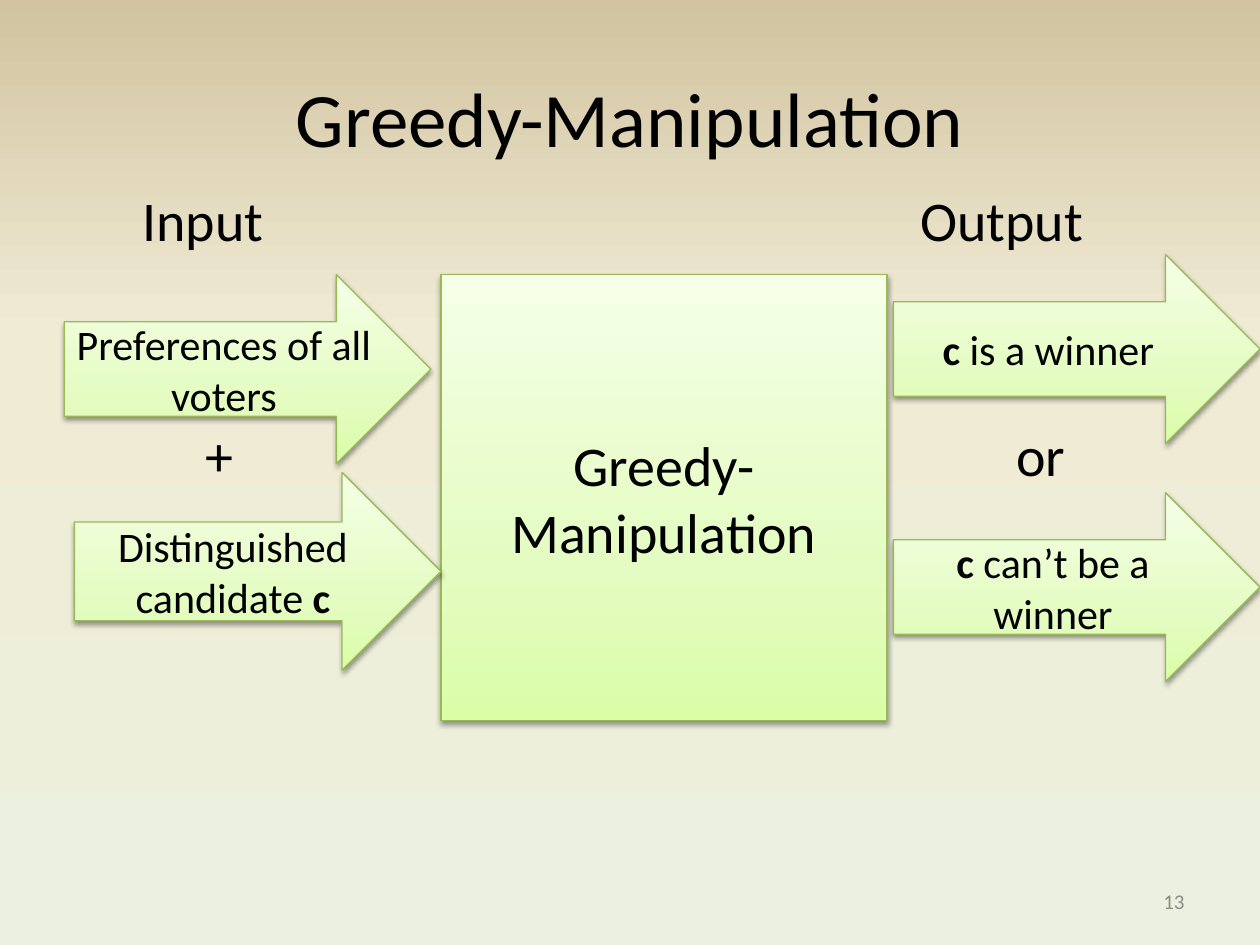
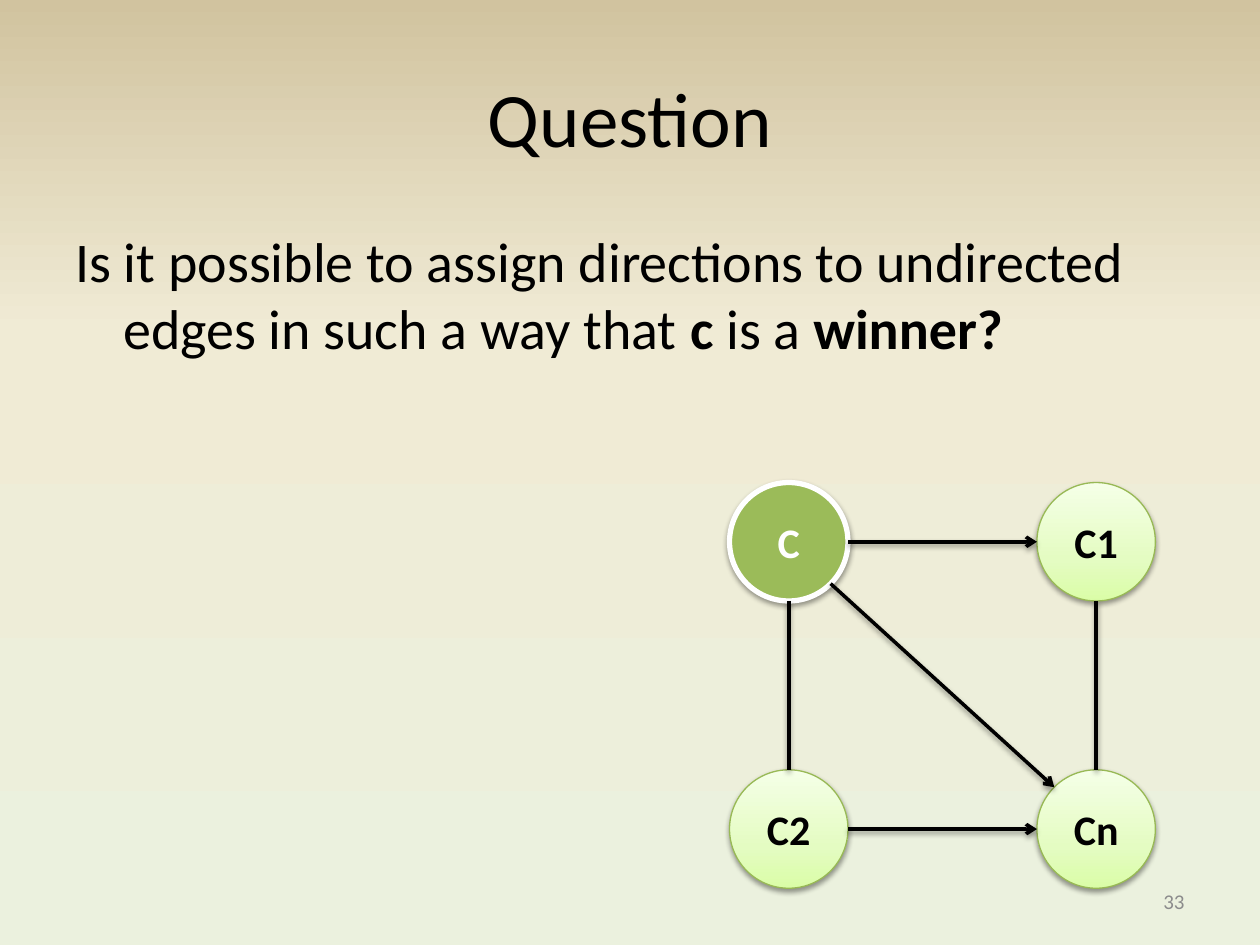
"""Build two slides on greedy manipulation in voting: its inputs and outputs, and a graph question."""
from dataclasses import dataclass
from math import hypot

from lxml import etree
from pptx import Presentation, util as u
from pptx.dml.color import RGBColor
from pptx.enum import shapes, text
from pptx.oxml.ns import qn

COLUMNS, ROWS = 100, 75
CELL = u.Inches(0.1)
TITLE_ONLY = 5


@dataclass(frozen=True)
class Theme:
    """Colours, type sizes and line widths that the slides share."""
    font: str = "Calibri"
    ink: str = "000000"
    light: str = "FFFFFF"
    muted: str = "8C8C8C"
    accent: str = "9BBB59"
    outline: str = "98B955"
    background: tuple = ((0, "EBF1DE"), (65, "F0EBD5"), (100, "D1C39F"))
    panel: tuple = ((0, "DAFDA7"), (35, "E4FCC2"), (100, "F5FFE7"))
    title_size: int = 44
    body_size: int = 32
    label_size: int = 24
    number_size: int = 12
    outline_width: float = 0.75
    highlight_width: float = 3
    edge_width: float = 2


THEME = Theme()


def grid(*cells):
    """Turn grid columns and rows into lengths."""
    return [round(cell * CELL) for cell in cells]


def paint_gradient(fill, element, stops):
    """Fill upwards with the given (percent, colour) stops."""
    fill.gradient()
    fill.gradient_angle = 90
    stop_list = element.find(".//" + qn("a:gsLst"))
    for stop in list(stop_list):
        stop_list.remove(stop)
    for percent, colour in stops:
        stop = etree.SubElement(stop_list, qn("a:gs"), pos=str(percent * 1000))
        etree.SubElement(stop, qn("a:srgbClr"), val=colour)


def paint_line(line, colour, width):
    """Give a line its colour and width."""
    line.color.rgb = RGBColor.from_string(colour)
    line.width = u.Pt(width)


def add_shadow(shape):
    """Drop a soft shadow straight below a shape or connector."""
    effects = etree.SubElement(shape.element.spPr, qn("a:effectLst"))
    shadow = etree.SubElement(
        effects, qn("a:outerShdw"), blurRad=str(u.Pt(3.1)), dist=str(u.Pt(1.6)),
        dir="5400000", rotWithShape="0")
    colour = etree.SubElement(shadow, qn("a:srgbClr"), val=THEME.ink)
    etree.SubElement(colour, qn("a:alpha"), val="38000")


def write(frame, runs, size, colour=THEME.ink, align=text.PP_ALIGN.CENTER,
          anchor=text.MSO_ANCHOR.MIDDLE):
    """Write one paragraph of (wording, bold) runs and return it."""
    frame.word_wrap = True
    frame.vertical_anchor = anchor
    paragraph = frame.paragraphs[0]
    paragraph.alignment = align
    for wording, bold in runs:
        run = paragraph.add_run()
        run.text = wording
        run.font.name = THEME.font
        run.font.size = u.Pt(size)
        run.font.bold = bold
        run.font.color.rgb = RGBColor.from_string(colour)
    return paragraph


def add_slide(presentation, title, number):
    """Add a slide with its title and page number."""
    slide = presentation.slides.add_slide(presentation.slide_layouts[TITLE_ONLY])
    heading = slide.shapes.title
    heading.left, heading.top, heading.width, heading.height = grid(5, 3, 90, 12.5)
    write(heading.text_frame, [(title, False)], THEME.title_size)
    page = slide.shapes.add_textbox(*grid(71.7, 69.5, 23.3, 4))
    write(page.text_frame, [(number, False)], THEME.number_size, THEME.muted,
          text.PP_ALIGN.RIGHT)
    return slide


def add_label(slide, wording, centre, top):
    """Add a large caption centred on a column."""
    width = 20
    box = slide.shapes.add_textbox(*grid(centre - width / 2, top, width, 5.5))
    box.text_frame.margin_top = box.text_frame.margin_bottom = 0
    write(box.text_frame, [(wording, False)], THEME.body_size, anchor=text.MSO_ANCHOR.TOP)


def add_panel(slide, kind, box, runs, size=THEME.label_size, highlighted=False):
    """Add a shadowed shape with centred text, green or highlighted."""
    shape = slide.shapes.add_shape(kind, *grid(*box))
    if highlighted:
        shape.fill.solid()
        shape.fill.fore_color.rgb = RGBColor.from_string(THEME.accent)
        paint_line(shape.line, THEME.light, THEME.highlight_width)
    else:
        paint_gradient(shape.fill, shape.element, THEME.panel)
        paint_line(shape.line, THEME.outline, THEME.outline_width)
    add_shadow(shape)
    write(shape.text_frame, runs, size, THEME.light if highlighted else THEME.ink)


def add_edge(slide, start, end, radius, directed):
    """Join two node centres from rim to rim, at multiples of 45 degrees on the rim."""
    signs = [(b > a) - (b < a) for a, b in zip(start, end)]
    reach = [radius * sign / hypot(*signs) for sign in signs]
    begin = [centre + step for centre, step in zip(start, reach)]
    finish = [centre - step for centre, step in zip(end, reach)]
    edge = slide.shapes.add_connector(
        shapes.MSO_CONNECTOR.STRAIGHT, *grid(*begin, *finish))
    paint_line(edge.line, THEME.ink, THEME.edge_width)
    if directed:
        etree.SubElement(edge.line._get_or_add_ln(), qn("a:tailEnd"), type="arrow")
    add_shadow(edge)


def build_process(presentation):
    """Show the inputs and outputs of the algorithm."""
    name = "Greedy-Manipulation"
    slide = add_slide(presentation, name, "13")
    for wording, centre, top in (("Input", 16.1, 14.7), ("Output", 79.5, 14.7),
                                 ("+", 17.4, 33.4), ("or", 82.6, 33.4)):
        add_label(slide, wording, centre, top)
    add_panel(slide, shapes.MSO_SHAPE.RECTANGLE, (35, 21.8, 35.4, 35.4),
              [(name, False)], THEME.body_size)
    arrows = (
        (5.1, 21.8, 15, [("Preferences of all voters", False)]),
        (5.9, 37.5, 15.7, [("Distinguished candidate ", False), ("c", True)]),
        (70.9, 20.2, 15, [("c", True), (" is a winner ", False)]),
        (70.9, 39.1, 15, [("c", True), (" can’t be a winner", False)]),
    )
    for left, top, height, runs in arrows:
        add_panel(slide, shapes.MSO_SHAPE.RIGHT_ARROW, (left, top, 29.1, height), runs)


def build_question(presentation):
    """Ask the question beside a partly directed graph."""
    slide = add_slide(presentation, "Question", "33")
    question = slide.shapes.add_textbox(*grid(5, 17.5, 90, 49.5))
    paragraph = write(
        question.text_frame,
        [("Is it possible to assign directions to undirected edges in such a way that", False),
         (" c ", True), ("is a ", False), ("winner?", True)],
        THEME.body_size, align=text.PP_ALIGN.LEFT, anchor=text.MSO_ANCHOR.TOP)
    indent = u.Inches(0.38)
    properties = paragraph._p.get_or_add_pPr()
    properties.set("marL", str(indent))
    properties.set("indent", str(-indent))

    radius = 4.7
    left, right, top, bottom = 62.6, 87, 43, 65.8
    nodes = {"C": (left, top), "C2": (left, bottom),
             "Cn": (right, bottom), "C1": (right, top)}
    for name, (x, y) in nodes.items():
        add_panel(slide, shapes.MSO_SHAPE.FLOWCHART_CONNECTOR,
                  (x - radius, y - radius, 2 * radius, 2 * radius),
                  [(name, True)], highlighted=name == "C")
    for start, end, directed in (("C", "C1", True), ("C", "Cn", True), ("C2", "Cn", True),
                                 ("C1", "Cn", False), ("C", "C2", False)):
        add_edge(slide, nodes[start], nodes[end], radius, directed)


def main():
    """Build and save the presentation."""
    presentation = Presentation()
    presentation.slide_width, presentation.slide_height = grid(COLUMNS, ROWS)
    master = presentation.slide_master
    paint_gradient(master.background.fill, master.element, THEME.background)
    build_process(presentation)
    build_question(presentation)
    presentation.save("out.pptx")


if __name__ == "__main__":
    main()
